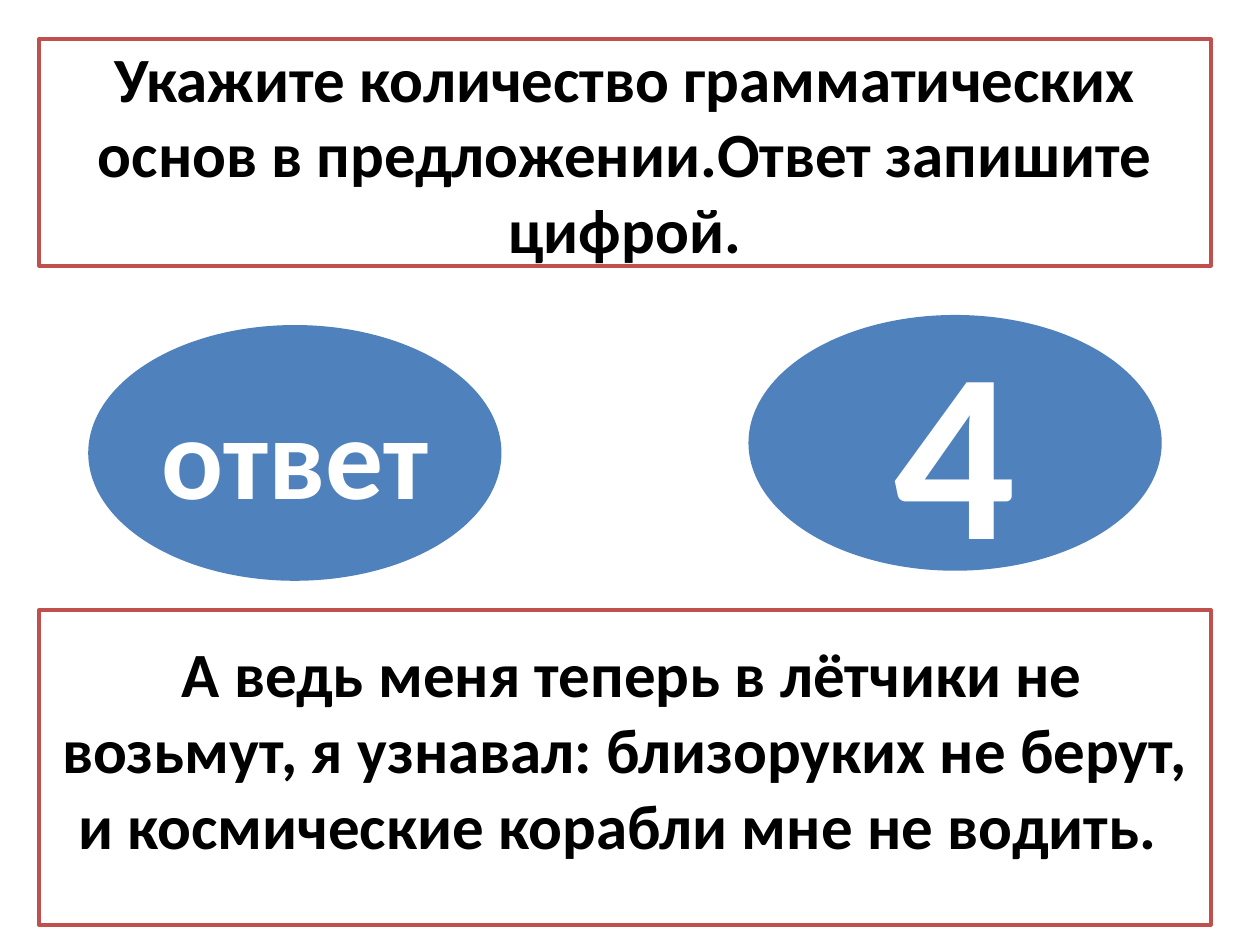
from pptx import Presentation
from pptx.dml.color import RGBColor
from pptx.enum.shapes import MSO_SHAPE
from pptx.enum.text import MSO_ANCHOR, MSO_AUTO_SIZE, PP_ALIGN
from pptx.util import Inches, Pt

BLACK, WHITE, RED, BLUE = "000000", "FFFFFF", "C0504D", "4F81BD"
QUESTION = "Укажите количество грамматических основ в предложении.Ответ запишите цифрой."
SENTENCE = (" А ведь меня теперь в лётчики не возьмут, я узнавал: "
            "близоруких не берут, и космические корабли мне не водить. ")


def color(value):
    """Turn a hex string into a colour."""
    return RGBColor.from_string(value)


def set_values(target, values):
    """Set attributes from a dict of format values."""
    for name, value in values.items():
        setattr(target, name, value)


def write_text(shape, text, size, text_color, bottom=0.05):
    """Write bold centred text into a shape."""
    frame = shape.text_frame
    set_values(frame, {
        "text": text, "word_wrap": True, "auto_size": MSO_AUTO_SIZE.NONE,
        "vertical_anchor": MSO_ANCHOR.MIDDLE,
        "margin_left": Inches(0.1), "margin_right": Inches(0.1),
        "margin_top": Inches(0.05), "margin_bottom": Inches(bottom),
    })
    para = frame.paragraphs[0]
    para.alignment = PP_ALIGN.CENTER
    set_values(para.font, {"name": "Calibri", "size": Pt(size), "bold": True})
    para.font.color.rgb = color(text_color)


def paint(shape, fill, line=None):
    """Fill a shape and give it an outline or none."""
    shape.fill.solid()
    shape.fill.fore_color.rgb = color(fill)
    if line:
        shape.line.color.rgb = color(line)
        shape.line.width = Pt(2)
    else:
        shape.line.fill.background()


def add_shape(page, kind, left, top, width, height):
    """Add a preset shape without a shadow."""
    shape = page.shapes.add_shape(
        kind, Inches(left), Inches(top), Inches(width), Inches(height))
    shape.shadow.inherit = False
    return shape


def add_question(page):
    """Place the question in the framed title."""
    title = page.shapes.title
    set_values(title, {"left": Inches(0.31), "top": Inches(0.31),
                       "width": Inches(9.3), "height": Inches(1.8)})
    paint(title, WHITE, RED)
    write_text(title, QUESTION, 36, BLACK)


def add_oval(page, left, top, text, size):
    """Add a blue oval with a large label."""
    oval = add_shape(page, MSO_SHAPE.OVAL, left, top, 3.28, 2.03)
    paint(oval, BLUE)
    write_text(oval, text, size, WHITE)


def add_sentence(page):
    """Add the framed sentence to analyse."""
    box = add_shape(page, MSO_SHAPE.RECTANGLE, 0.31, 4.84, 9.3, 2.5)
    paint(box, WHITE, RED)
    write_text(box, SENTENCE, 36, BLACK, bottom=0.35)


def main():
    """Build the quiz slide."""
    deck = Presentation()
    set_values(deck, {"slide_width": Inches(10), "slide_height": Inches(7.5)})
    page = deck.slides.add_slide(deck.slide_layouts[5])
    add_question(page)
    add_oval(page, 0.7, 2.58, "ответ", 66)
    add_oval(page, 5.94, 2.5, "4", 138)
    add_sentence(page)
    deck.save("out.pptx")


if __name__ == "__main__":
    main()
